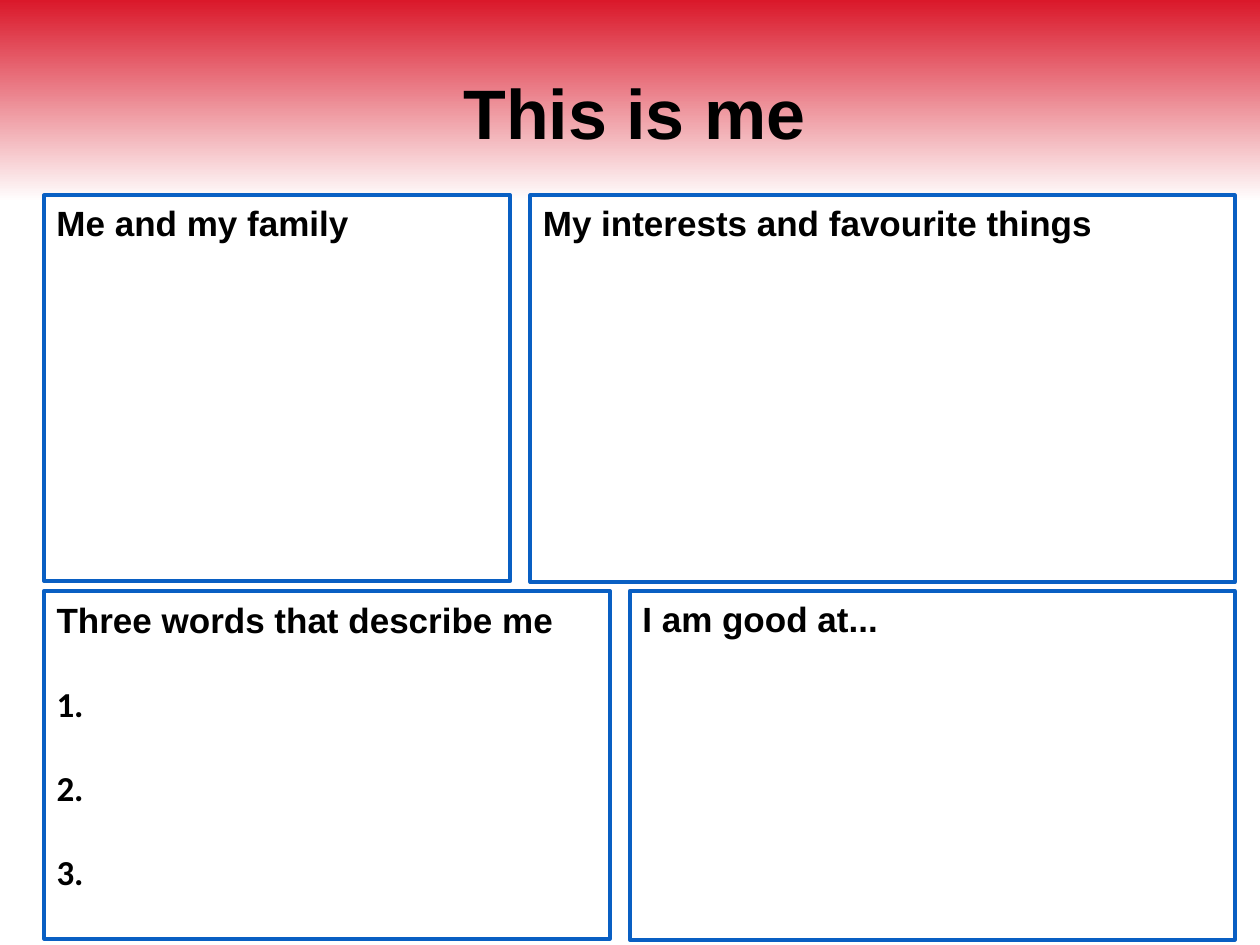
from pptx import Presentation
from pptx.dml.color import RGBColor
from pptx.enum.shapes import MSO_SHAPE
from pptx.enum.text import MSO_ANCHOR, PP_ALIGN
from pptx.util import Inches, Pt

RED = RGBColor(0xDA, 0x18, 0x2A)
WHITE = RGBColor(0xFF, 0xFF, 0xFF)
BLUE = RGBColor(0x09, 0x5F, 0xC3)
BLACK = RGBColor(0, 0, 0)

deck = Presentation()
deck.slide_width, deck.slide_height = Inches(10), Inches(7.5)
page = deck.slides.add_slide(deck.slide_layouts[6])

# Grid: 100 columns by 100 rows
COLUMN = deck.slide_width / 100
ROW = deck.slide_height / 100


def place(left, top, width, height):
    return int(left * COLUMN), int(top * ROW), int(width * COLUMN), int(height * ROW)


def write(box, text, size=20, font="Arial", anchor=MSO_ANCHOR.TOP, gap=0):
    frame = box.text_frame
    frame.word_wrap = True
    frame.vertical_anchor = anchor
    frame.text = text
    for number, para in enumerate(frame.paragraphs):
        para.alignment = PP_ALIGN.LEFT
        if number:
            para.space_before = Pt(gap)
        for span in para.runs:
            span.font.size = Pt(size)
            span.font.name = font
            span.font.bold = True
            span.font.color.rgb = BLACK


# Banner fading from red to white
banner = page.shapes.add_shape(MSO_SHAPE.RECTANGLE, *place(0, 0, 100, 21.33))
banner.shadow.inherit = False
banner.line.fill.background()
banner.fill.gradient()
banner.fill.gradient_angle = 270
for stop, colour in zip(banner.fill.gradient_stops, (RED, WHITE)):
    stop.color.rgb = colour

# Title and the heading of the three words
title = page.shapes.add_textbox(*place(35.8, 6.13, 34.6, 11.33))
write(title, "This is me", size=40, anchor=MSO_ANCHOR.MIDDLE)
words_heading = page.shapes.add_textbox(*place(3.5, 62.53, 44.9, 6.13))
write(words_heading, "Three words that describe me", anchor=MSO_ANCHOR.MIDDLE)

# Outlined panels: two rows sharing the outer margins
LEFT, RIGHT = 3.5, 98
UPPER, LOWER = 20.67, 62.53
panels = [
    (LEFT, UPPER, 40.5, 40.8, "Me and my family"),
    (42.1, UPPER, RIGHT, 40.93, "My interests and favourite things"),
    (LEFT, LOWER, 48.4, 36.8, "1.\n2.\n3."),
    (50, LOWER, RIGHT, 36.93, "I am good at..."),
]
for left, top, right, height, text in panels:
    panel = page.shapes.add_shape(
        MSO_SHAPE.RECTANGLE, *place(left, top, right - left, height))
    panel.shadow.inherit = False
    panel.fill.background()
    panel.line.color.rgb = BLUE
    panel.line.width = Pt(2.25)
    if text.startswith("1."):
        # The list starts two lines down, below its heading
        panel.text_frame.margin_top = int(9.73 * ROW)
        write(panel, text, font="Calibri", gap=24)
    else:
        write(panel, text)

deck.save("out.pptx")
